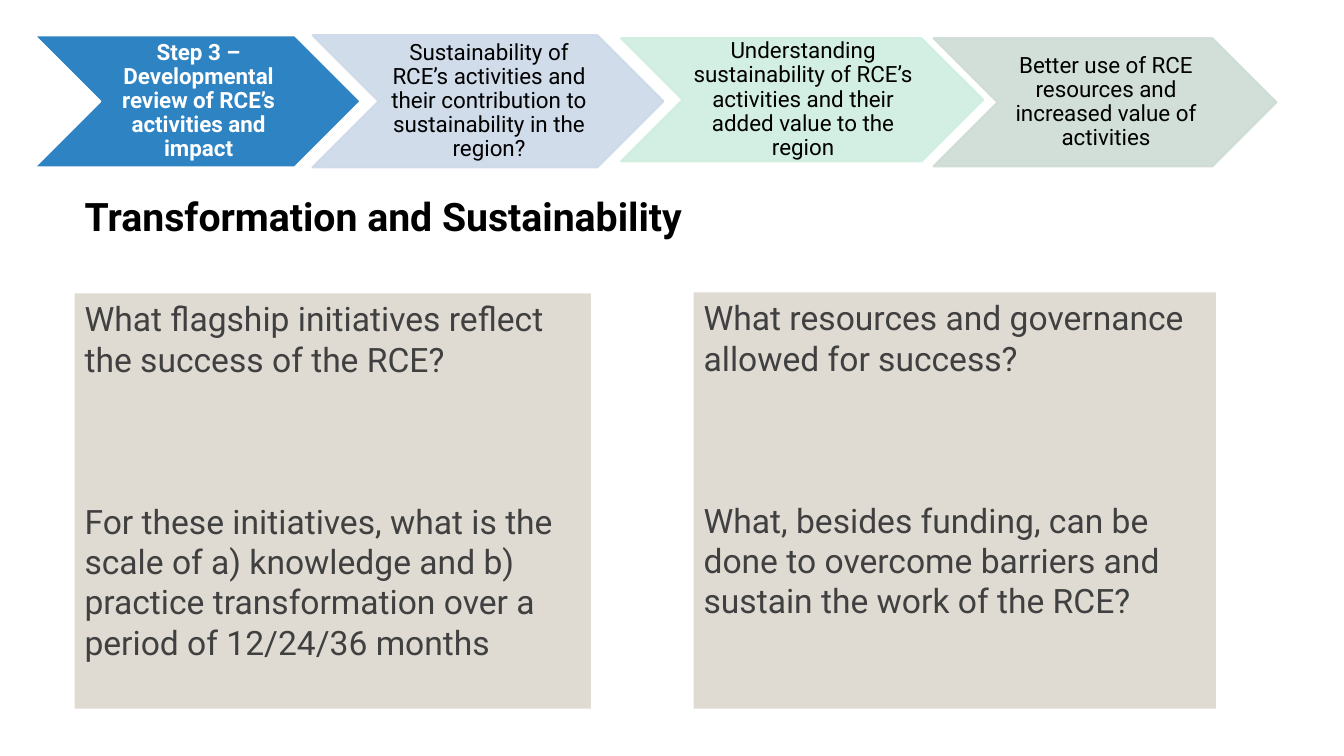
from dataclasses import dataclass

from lxml.etree import SubElement
from pptx import Presentation
from pptx.dml.color import RGBColor
from pptx.enum.shapes import MSO_SHAPE as SHAPE
from pptx.enum.text import MSO_ANCHOR as ANCHOR, MSO_AUTO_SIZE as FIT, PP_ALIGN as ALIGN
from pptx.oxml.ns import qn
from pptx.shapes.autoshape import Shape
from pptx.slide import Slide
from pptx.util import Inches, Pt

COLORS = {
    "white": "FFFFFF", "black": "000000", "grey": "404040", "sand": "DFDBD3",
    "blue": "2E83C3", "lilac": "CDD9E9", "mint": "CFEEE0", "sage": "CDDCD4",
}
FORMATS = {
    "title": {"name": "Roboto", "size": Pt(28), "bold": True},
    "step": {"name": "Roboto", "size": Pt(16), "bold": True},
    "stage": {"name": "Roboto", "size": Pt(16), "bold": False},
    "question": {"name": "Roboto", "size": Pt(24), "bold": False},
}
FRAMES = {
    "top": {"word_wrap": True, "auto_size": FIT.NONE, "vertical_anchor": ANCHOR.TOP,
            "margin_left": Inches(0.1), "margin_right": Inches(0.1),
            "margin_top": Inches(0.05), "margin_bottom": Inches(0.05)},
    "middle": {"word_wrap": True, "auto_size": FIT.NONE, "vertical_anchor": ANCHOR.MIDDLE,
               "margin_left": Inches(0.02), "margin_right": 0,
               "margin_top": Inches(0.01), "margin_bottom": Inches(0.01)},
}


@dataclass(frozen=True)
class Box:
    left: float
    top: float
    width: float
    height: float

    def emu(self) -> tuple[int, ...]:
        return tuple(Inches(v) for v in (self.left, self.top, self.width, self.height))


@dataclass(frozen=True)
class Stage:
    box: Box
    text: str
    fill: str
    line: str
    color: str = "black"
    style: str = "stage"
    alpha: int = 90


@dataclass(frozen=True)
class Panel:
    box: Box
    questions: tuple[str, ...]


STAGES = [
    Stage(Box(0.34, 0.35, 3.24, 1.31),
          "Step 3 – Developmental review of RCE’s activities and impact",
          "blue", "white", "white", "step", 100),
    Stage(Box(3.1, 0.35, 3.48, 1.31),
          "Sustainability of RCE’s activities and their contribution to "
          "sustainability in the region?", "lilac", "lilac"),
    Stage(Box(6.16, 0.38, 3.59, 1.22),
          "Understanding sustainability of RCE’s activities and their added value "
          "to the region", "mint", "mint"),
    Stage(Box(9.26, 0.38, 3.4, 1.27),
          "Better use of RCE resources and increased value of activities",
          "sage", "sage"),
]
PANELS = [
    Panel(Box(0.74, 2.91, 5.12, 4.12), (
        "What flagship initiatives reflect the success of the RCE?",
        "For these initiatives, what is the scale of a) knowledge and b) practice "
        "transformation over a period of 12/24/36 months")),
    Panel(Box(6.88, 2.9, 5.18, 4.13), (
        "What resources and governance allowed for success?",
        "What, besides funding, can be done to overcome barriers and sustain the "
        "work of the RCE?")),
]


def rgb(name: str) -> RGBColor:
    return RGBColor.from_string(COLORS[name])


def write(s: Shape, texts: tuple[str, ...], frame: str, style: str, color: str,
          **layout: object) -> None:
    tf = s.text_frame
    for key, value in FRAMES[frame].items():
        setattr(tf, key, value)
    for i, text in enumerate(texts):
        p = tf.add_paragraph() if i else tf.paragraphs[0]
        for key, value in layout.items():
            setattr(p, key, value)
        r = p.add_run()
        r.text = text
        for key, value in FORMATS[style].items():
            setattr(r.font, key, value)
        r.font.color.rgb = rgb(color)


def add_filled(slide: Slide, kind: SHAPE, box: Box, fill: str) -> Shape:
    s = slide.shapes.add_shape(kind, *box.emu())
    s.shadow.inherit = False
    s.fill.solid()
    s.fill.fore_color.rgb = rgb(fill)
    return s


def add_stage(slide: Slide, stage: Stage) -> None:
    s = add_filled(slide, SHAPE.CHEVRON, stage.box, stage.fill)
    s.line.color.rgb = rgb(stage.line)
    s.line.width = Pt(1.5)
    if stage.alpha < 100:
        for color in s.element.spPr.iter(qn("a:srgbClr")):
            SubElement(color, qn("a:alpha")).set("val", str(stage.alpha * 1000))
    write(s, (stage.text,), "middle", stage.style, stage.color,
          alignment=ALIGN.CENTER, line_spacing=0.9)


def add_panel(slide: Slide, panel: Panel) -> None:
    s = add_filled(slide, SHAPE.RECTANGLE, panel.box, "sand")
    s.line.fill.background()
    write(s, panel.questions, "top", "question", "grey", alignment=ALIGN.LEFT)
    for p in s.text_frame.paragraphs[1:]:
        p.space_before = Pt(87)


def add_title(slide: Slide, box: Box, text: str) -> None:
    s = slide.shapes.title
    s.left, s.top, s.width, s.height = box.emu()
    write(s, (text,), "top", "title", "black", alignment=ALIGN.LEFT)


def main() -> None:
    """Build the slide on transformation and sustainability and save it."""
    prs = Presentation()
    prs.slide_width, prs.slide_height = Inches(13.33), Inches(7.5)
    slide = prs.slides.add_slide(prs.slide_layouts[5])
    add_title(slide, Box(0.74, 1.86, 6.62, 1.04), "Transformation and Sustainability")
    for panel in PANELS:
        add_panel(slide, panel)
    for stage in STAGES:
        add_stage(slide, stage)
    prs.save("out.pptx")


if __name__ == "__main__":
    main()
